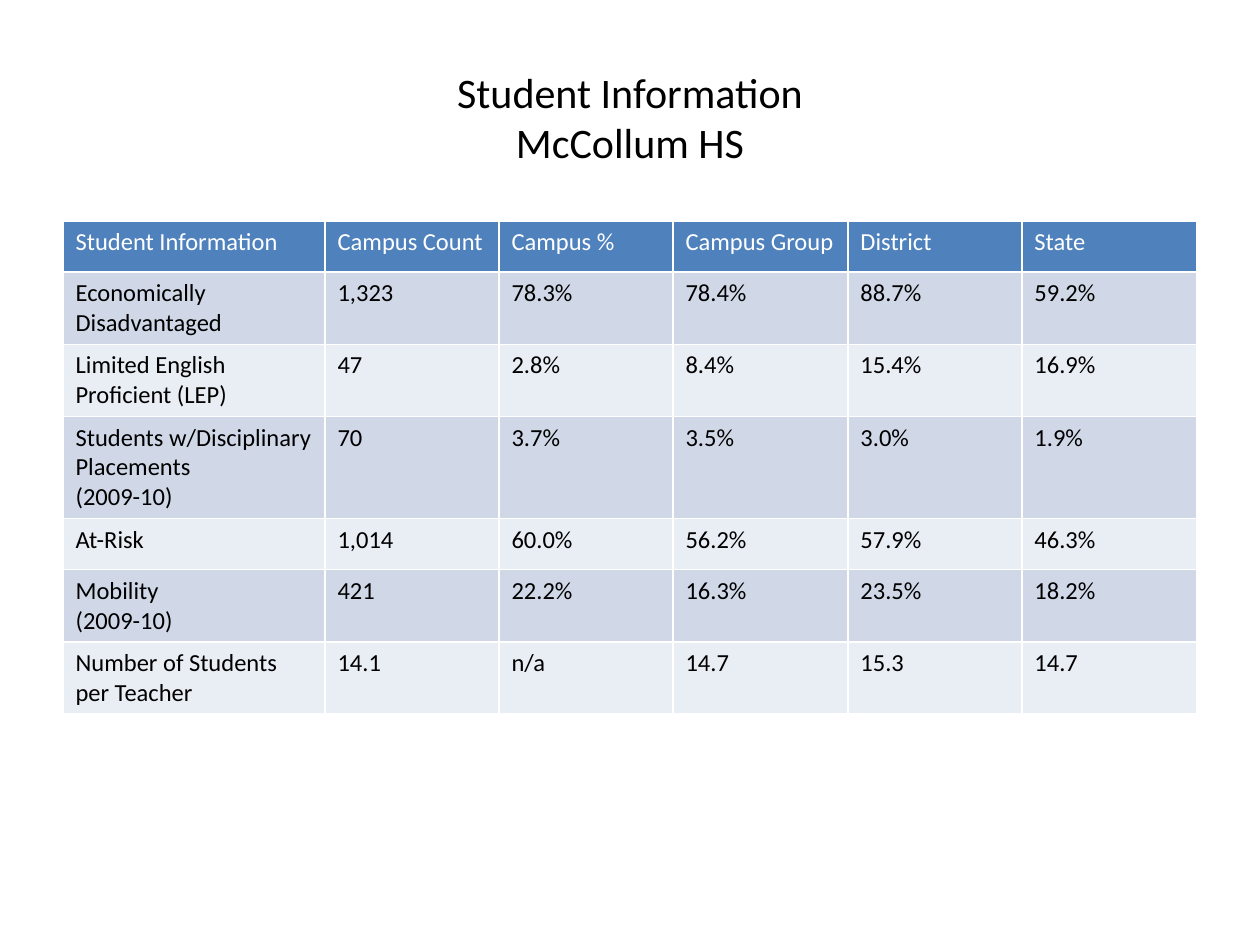
from pptx import Presentation
from pptx.dml.color import RGBColor
from pptx.enum.text import MSO_ANCHOR, PP_ALIGN
from pptx.util import Emu, Pt

EMU_PER_PX = 914400 / 126
COLORS = {
    "text": "000000",
    "header_text": "FFFFFF",
    "header": "4F81BD",
    "odd_row": "D0D8E8",
    "even_row": "E9EDF4",
}
COLUMN_WIDTHS = [262, 174, 174, 175, 174, 175]
ROW_HEIGHT = 51
STUDENT_ROWS = [
    ["Student Information", "Campus Count", "Campus %", "Campus Group", "District", "State"],
    ["Economically Disadvantaged", "1,323", "78.3%", "78.4%", "88.7%", "59.2%"],
    ["Limited English Proficient (LEP)", "47", "2.8%", "8.4%", "15.4%", "16.9%"],
    ["Students w/Disciplinary Placements\n(2009-10)", "70", "3.7%", "3.5%", "3.0%", "1.9%"],
    ["At-Risk", "1,014", "60.0%", "56.2%", "57.9%", "46.3%"],
    ["Mobility\n(2009-10)", "421", "22.2%", "16.3%", "23.5%", "18.2%"],
    ["Number of Students per Teacher", "14.1", "n/a", "14.7", "15.3", "14.7"],
]


def px(length):
    return Emu(round(length * EMU_PER_PX))


class SlideBuilder:
    """Holds the text style and the current slide, and adds elements to it."""

    def __init__(self, presentation, font_name):
        self.font_name = font_name
        self.slide = presentation.slides.add_slide(presentation.slide_layouts[5])

    def fill_text(self, text_frame, text, size, color, alignment):
        text_frame.text = text
        font_format = {"name": self.font_name, "size": Pt(size), "bold": False}
        for paragraph in text_frame.paragraphs:
            paragraph.alignment = alignment
            for run in paragraph.runs:
                for attribute, value in font_format.items():
                    setattr(run.font, attribute, value)
                run.font.color.rgb = RGBColor.from_string(COLORS[color])

    def title(self, text, left, top, width, height):
        shape = self.slide.shapes.title
        position = {"left": left, "top": top, "width": width, "height": height}
        for attribute, value in position.items():
            setattr(shape, attribute, px(value))
        shape.text_frame.vertical_anchor = MSO_ANCHOR.MIDDLE
        self.fill_text(shape.text_frame, text, 24, "text", PP_ALIGN.CENTER)

    def table(self, rows, left, top, column_widths, row_height):
        shape = self.slide.shapes.add_table(
            len(rows), len(column_widths), px(left), px(top),
            px(sum(column_widths)), px(row_height * len(rows)),
        )
        table = shape.table
        for column, width in zip(table.columns, column_widths):
            column.width = px(width)
        for index, (row, texts) in enumerate(zip(table.rows, rows)):
            row.height = px(row_height)
            fill = "header" if index == 0 else "odd_row" if index % 2 else "even_row"
            color = "header_text" if index == 0 else "text"
            for cell, text in zip(row.cells, texts):
                cell.fill.solid()
                cell.fill.fore_color.rgb = RGBColor.from_string(COLORS[fill])
                self.fill_text(cell.text_frame, text, 14, color, PP_ALIGN.LEFT)


def main():
    presentation = Presentation()
    presentation.slide_width = px(1260)
    presentation.slide_height = px(945)
    builder = SlideBuilder(presentation, "Calibri")
    builder.title("Student Information\vMcCollum HS", 63, 38, 1134, 157)
    builder.table(STUDENT_ROWS, 63, 221, COLUMN_WIDTHS, ROW_HEIGHT)
    presentation.save("out.pptx")


if __name__ == "__main__":
    main()
